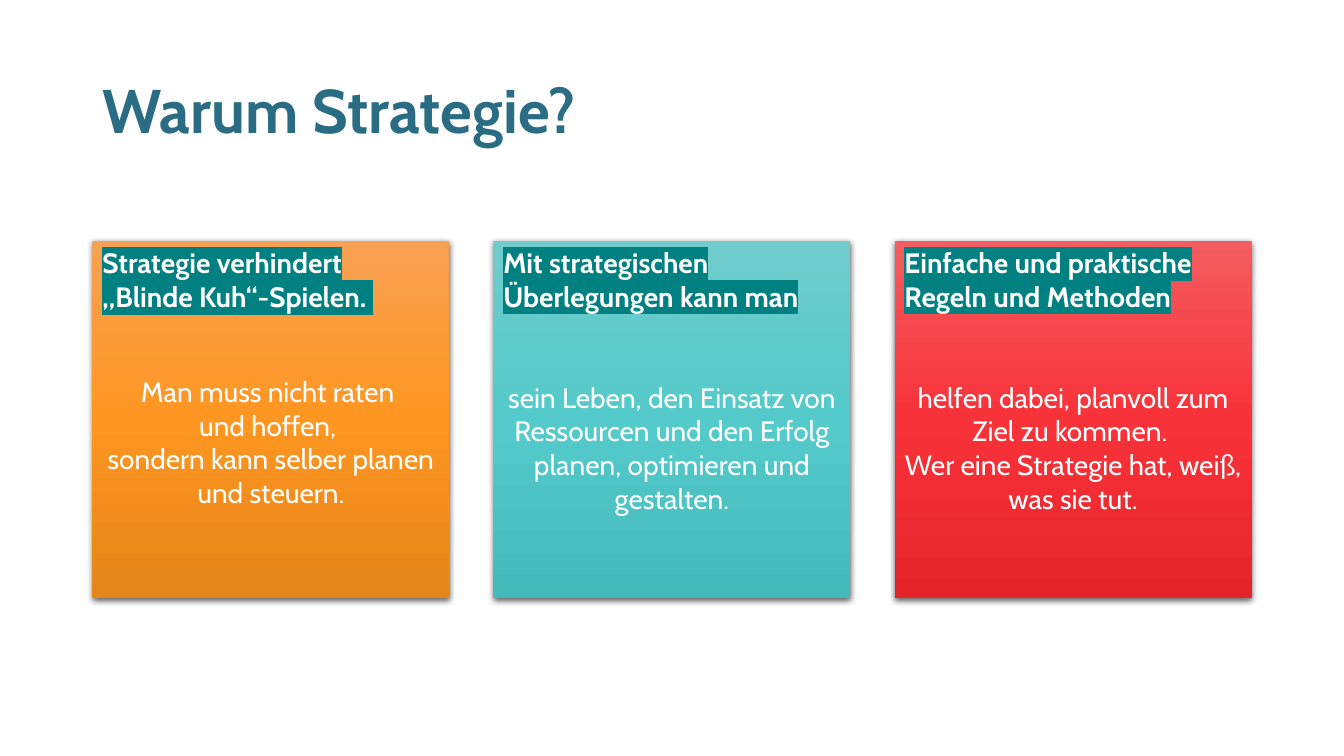
from copy import deepcopy
from dataclasses import dataclass

from lxml.etree import SubElement
from pptx import Presentation
from pptx.dml.color import RGBColor
from pptx.enum.shapes import MSO_SHAPE
from pptx.enum.text import MSO_ANCHOR, MSO_AUTO_SIZE, PP_ALIGN
from pptx.oxml.ns import qn
from pptx.util import Pt


@dataclass(frozen=True)
class Theme:
    font: str = "Cabin"
    title: str = "2A6C83"
    text: str = "FFFFFF"
    highlight: str = "008080"
    shadow: str = "000000"
    orange: tuple = ("F8A154", "FE9621", "E5851A")
    teal: tuple = ("70CCCC", "54CACA", "44BABA")
    red: tuple = ("F35C60", "F83239", "E5242A")
    title_size: int = 44
    text_size: int = 20


THEME = Theme()
CONTENT_LEFT, CONTENT_WIDTH = 66, 828
CARD_TOP, CARD_SIZE = 172, 255

# heading, body, gradient, space between heading and body
CARDS = [
    ("Strategie verhindert\n„Blinde Kuh“-Spielen. ",
     "Man muss nicht raten \nund hoffen, \nsondern kann selber planen und steuern.",
     THEME.orange, 44),
    ("Mit strategischen Überlegungen kann man",
     "sein Leben, den Einsatz von Ressourcen und den Erfolg planen, "
     "optimieren und gestalten.",
     THEME.teal, 48),
    ("Einfache und praktische Regeln und Methoden",
     "helfen dabei, planvoll zum Ziel zu kommen. \n"
     "Wer eine Strategie hat, weiß, was sie tut.",
     THEME.red, 48),
]


def place(sp, left, top, width, height):
    sp.left, sp.top, sp.width, sp.height = map(Pt, (left, top, width, height))


def write(p, text, size, color, bold, align, highlight=None):
    """Fill a paragraph, giving its line breaks the same format as its runs."""
    p.text = text
    p.alignment = align
    for r in p.runs:
        r.font.name, r.font.size, r.font.bold = THEME.font, Pt(size), bold
        r.font.color.rgb = RGBColor.from_string(color)
        if highlight:
            rPr = r.font._element
            mark = SubElement(rPr, qn("a:highlight"))
            SubElement(mark, qn("a:srgbClr"), val=highlight)
            rPr.find(qn("a:solidFill")).addnext(mark)
    for br in p._p.findall(qn("a:br")):
        br.append(deepcopy(p.runs[0].font._element))


def fill_gradient(sp, colors):
    sp.fill.gradient()
    sp.fill.gradient_angle = 270
    stops = sp._element.spPr.find(qn("a:gradFill")).find(qn("a:gsLst"))
    stops.insert(1, deepcopy(stops[0]))
    for i, (stop, color) in enumerate(zip(sp.fill.gradient_stops, colors)):
        stop.position = i / 2
        stop.color.rgb = RGBColor.from_string(color)


def add_shadow(sp):
    sp.shadow.inherit = False
    effects = sp._element.spPr.find(qn("a:effectLst"))
    outer = SubElement(effects, qn("a:outerShdw"), blurRad=str(Pt(4.5)),
                       dist=str(Pt(1.5)), dir="5400000", rotWithShape="0")
    color = SubElement(outer, qn("a:srgbClr"), val=THEME.shadow)
    SubElement(color, qn("a:alpha"), val="63000")


def format_title(sp, left, top, width, height):
    place(sp, left, top, width, height)
    tf = sp.text_frame
    tf.vertical_anchor = MSO_ANCHOR.MIDDLE
    p = tf.paragraphs[0]
    write(p, "Warum Strategie?", THEME.title_size, THEME.title, True, PP_ALIGN.LEFT)
    p.line_spacing = 0.9


def format_card(sp, left, top, size, heading, body, colors, gap):
    place(sp, left, top, size, size)
    fill_gradient(sp, colors)
    sp.line.fill.background()
    add_shadow(sp)
    tf = sp.text_frame
    tf.word_wrap = True
    tf.auto_size = MSO_AUTO_SIZE.NONE
    tf.vertical_anchor = MSO_ANCHOR.TOP
    first, second = tf.paragraphs[0], tf.add_paragraph()
    for p, before in ((first, 0), (second, gap)):
        pPr = p._p.get_or_add_pPr()
        pPr.set("marL", "0")
        pPr.set("indent", "0")
        SubElement(pPr, qn("a:buNone"))
        p.space_before, p.space_after, p.line_spacing = Pt(before), Pt(0), 1.0
    write(first, heading, THEME.text_size, THEME.text, True, PP_ALIGN.LEFT,
          THEME.highlight)
    write(second, body, THEME.text_size, THEME.text, False, PP_ALIGN.CENTER)


def build_slide(prs):
    s = prs.slides.add_slide(prs.slide_layouts[1])
    format_title(s.shapes.title, CONTENT_LEFT, 28.8, CONTENT_WIDTH, 104.4)
    step = (CONTENT_WIDTH - CARD_SIZE) / (len(CARDS) - 1)
    for i, card in enumerate(CARDS):
        if i == 0:
            sp = s.placeholders[1]
        else:
            sp = s.shapes.add_shape(MSO_SHAPE.RECTANGLE, 0, 0, 0, 0)
        format_card(sp, CONTENT_LEFT + i * step, CARD_TOP, CARD_SIZE, *card)


def main():
    prs = Presentation()
    prs.slide_width, prs.slide_height = Pt(960), Pt(540)
    build_slide(prs)
    prs.save("out.pptx")


if __name__ == "__main__":
    main()
